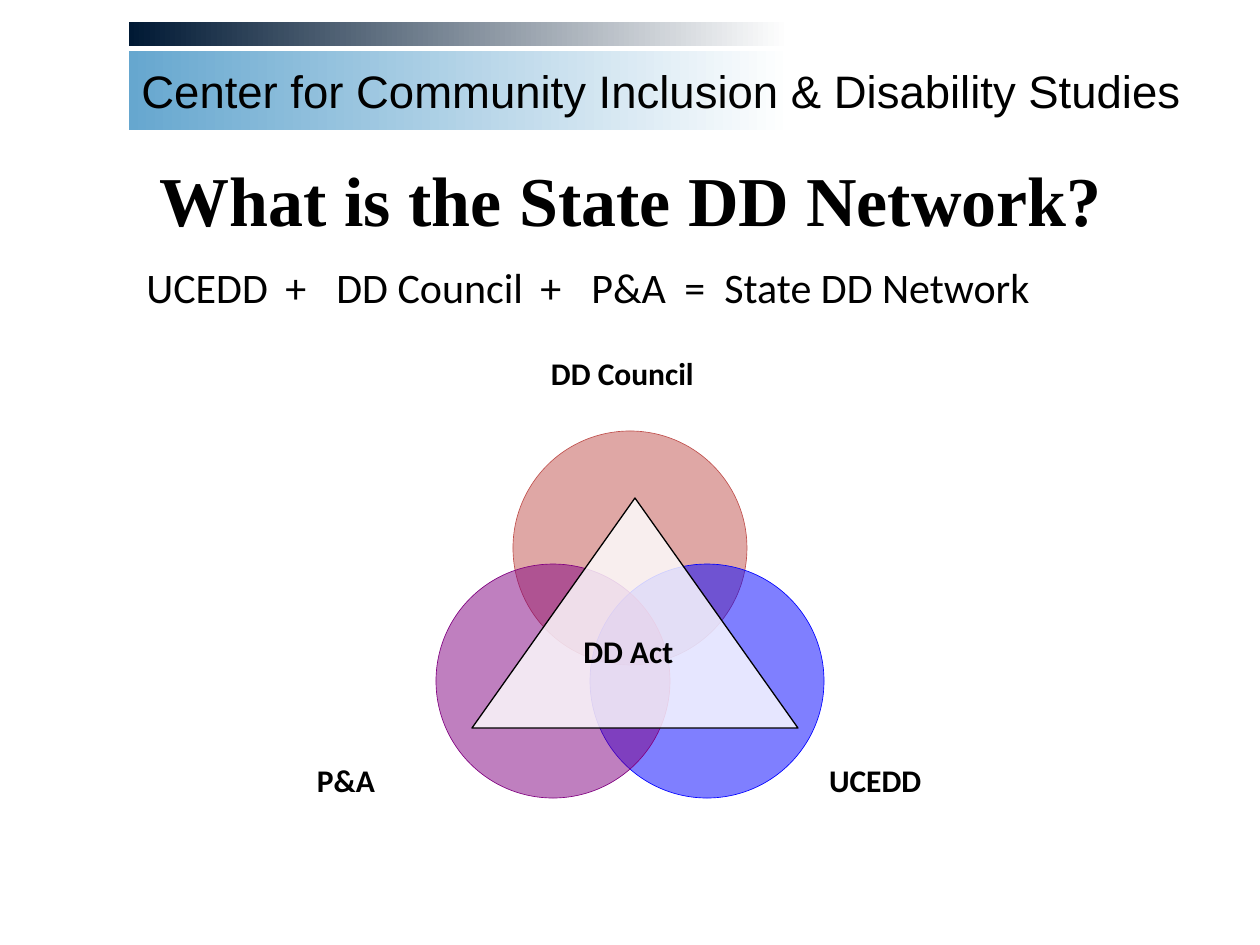
from lxml import etree
from pptx import Presentation
from pptx.dml.color import RGBColor
from pptx.enum.shapes import MSO_SHAPE as Kind
from pptx.enum.text import MSO_ANCHOR as Anchor, PP_ALIGN as Align
from pptx.oxml.ns import qn
from pptx.util import Pt

PX = 914400 / 126  # EMU in one px


def paint(fill, tone, alpha=100):
    fill.solid()
    fill.fore_color.rgb = RGBColor.from_string(tone)
    if alpha < 100:
        node = fill._xPr.find(qn("a:solidFill"))[0]
        etree.SubElement(node, qn("a:alpha"), val=str(alpha * 1000))


def write(shape, text, size, font, bold=False, align=Align.LEFT, pad=True):
    frame = shape.text_frame
    frame.word_wrap = True
    frame.vertical_anchor = Anchor.MIDDLE
    if not pad:
        frame.margin_left = frame.margin_right = 0
        frame.margin_top = frame.margin_bottom = 0
    para = frame.paragraphs[0]
    para.alignment = align
    run = para.add_run()
    run.text = text
    run.font.size, run.font.name, run.font.bold = Pt(size), font, bold
    paint(run.font.fill, "000000")
    return para


deck = Presentation()
deck.slide_width, deck.slide_height = int(1260 * PX), int(945 * PX)
slide = deck.slides.add_slide(deck.slide_layouts[6])
shapes = slide.shapes

# Header bands, fading to white
bands = [
    ((129, 51, 1105, 79), "66A7CF", "Center for Community Inclusion & Disability Studies"),
    ((129, 22, 1100, 24), "001934", ""),
]
for box, tone, text in bands:
    band = shapes.add_shape(Kind.RECTANGLE, *[int(v * PX) for v in box])
    band.shadow.inherit = False
    band.line.fill.background()
    band.fill.gradient()
    band.fill.gradient_angle = 0
    start, stop = band.fill.gradient_stops
    start.color.rgb = RGBColor.from_string(tone)
    stop.color.rgb = RGBColor.from_string("FFFFFF")
    start.position, stop.position = 0, 0.6
    if text:
        write(band, text, 26, "Arial")

# Title
title = shapes.add_textbox(*[int(v * PX) for v in (64, 120, 1134, 157)])
write(title, "What is the State DD Network?", 40, "Times New Roman", True, Align.CENTER)

# Circles and the triangle over them
parts = [
    (Kind.OVAL, (513, 431, 234, 234), "C0504D", 50, "C0504D", 0.37),
    (Kind.OVAL, (590, 564, 234, 234), "0000FF", 50, "0000FF", 0.37),
    (Kind.OVAL, (436, 564, 234, 234), "800080", 50, "800080", 0.37),
    (Kind.ISOSCELES_TRIANGLE, (472, 498, 326, 230), "FFFFFF", 81, "000000", 0.75),
]
for kind, box, tone, alpha, edge, width in parts:
    part = shapes.add_shape(kind, *[int(v * PX) for v in box])
    part.shadow.inherit = False
    paint(part.fill, tone, alpha)
    paint(part.line.fill, edge)
    part.line.width = Pt(width)

# Labels
labels = [
    ("DD Council", (551, 344, 156, 58), False),
    ("UCEDD", (829, 751, 234, 58), False),
    ("P&A", (317, 751, 113, 58), False),
    ("DD Act", (571, 626, 164, 50), True),
]
for text, box, pad in labels:
    label = shapes.add_textbox(*[int(v * PX) for v in box])
    write(label, text, 18, "Calibri", True, pad=pad)

# Equation, its terms set on tab stops
terms = ["UCEDD", "+", "DD Council", "+", "P&A", "=", "State DD Network"]
sum_box = shapes.add_textbox(*[int(v * PX) for v in (134, 255, 912, 63)])
para = write(sum_box, "\t".join(terms), 24, "Calibri")
tabs = etree.SubElement(para._p.get_or_add_pPr(), qn("a:tabLst"))
for pos in (139, 190, 394, 445, 538, 578):
    etree.SubElement(tabs, qn("a:tab"), pos=str(int(pos * PX)), algn="l")

deck.save("out.pptx")
